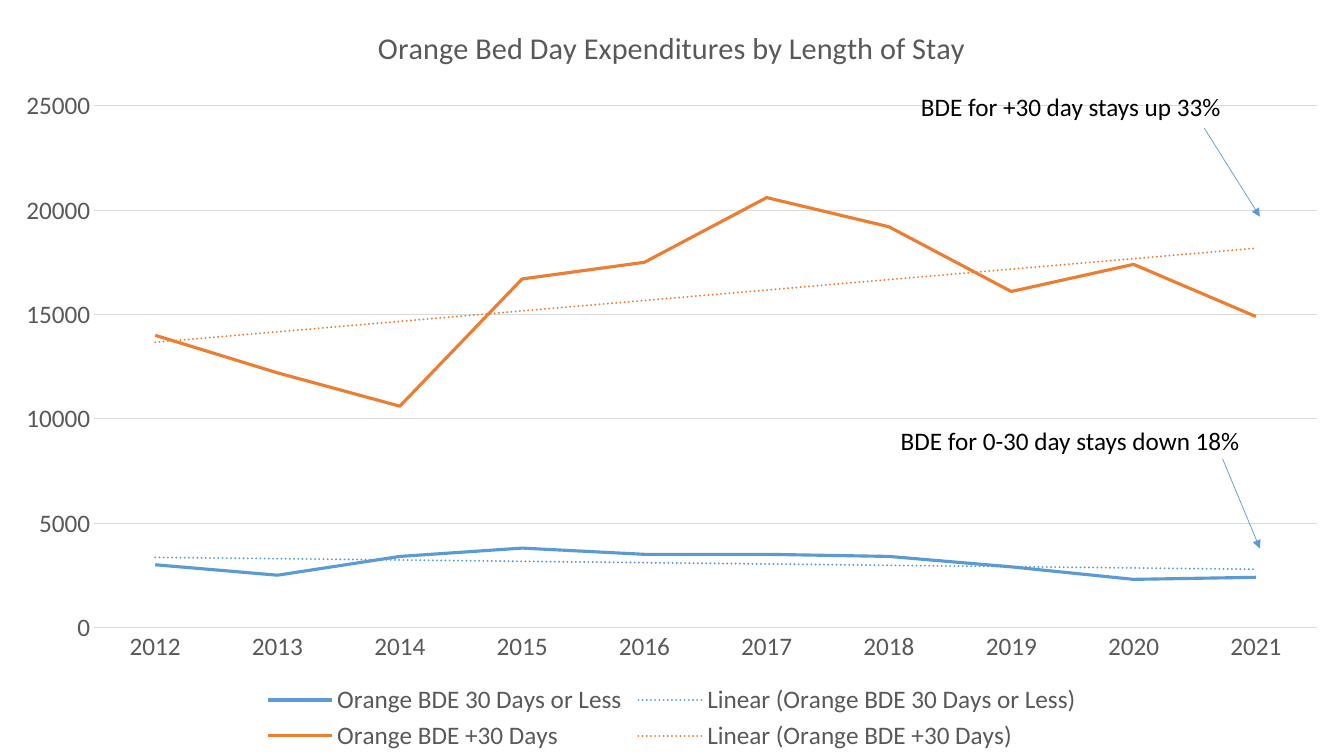
from lxml import etree
from pptx import Presentation
from pptx.chart.data import CategoryChartData
from pptx.dml.color import RGBColor
from pptx.enum.chart import XL_CHART_TYPE, XL_LEGEND_POSITION, XL_MARKER_STYLE, XL_TICK_MARK
from pptx.enum.shapes import MSO_CONNECTOR
from pptx.enum.text import MSO_AUTO_SIZE, PP_ALIGN
from pptx.oxml import parse_xml
from pptx.oxml.ns import nsdecls, qn
from pptx.util import Cm, Pt

LINE_CHART = XL_CHART_TYPE.LINE
LEGEND_BOTTOM = XL_LEGEND_POSITION.BOTTOM
NO_MARKER = XL_MARKER_STYLE.NONE
NO_TICK = XL_TICK_MARK.NONE
STRAIGHT = MSO_CONNECTOR.STRAIGHT
GROW = MSO_AUTO_SIZE.SHAPE_TO_FIT_TEXT
CENTER = PP_ALIGN.CENTER

FONT = "Calibri"
COLORS = {"short": "5B9BD5", "long": "ED7D31", "label": "595959",
          "grid": "D9D9D9", "note": "000000"}
YEARS = [str(year) for year in range(2012, 2022)]
STAYS = [
    ("Orange BDE 30 Days or Less", "short",
     [3000, 2500, 3400, 3800, 3500, 3500, 3400, 2900, 2300, 2400]),
    ("Orange BDE +30 Days", "long",
     [14000, 12200, 10600, 16700, 17500, 20600, 19200, 16100, 17400, 14900]),
]
# text, box (left, top, width, height), arrow start, arrow end, all in cm
NOTES = [
    ("BDE for +30 day stays up 33%", (22.96, 2.18, 8.15, 1.02), (30.35, 3.23), (31.75, 5.46)),
    ("BDE for 0-30 day stays down 18%", (22.45, 10.59, 9.14, 1.02), (30.81, 11.56), (31.75, 13.82)),
]


def rgb(name):
    return RGBColor.from_string(COLORS[name])


def style_font(font, size=18, color="label"):
    font.name = FONT
    font.size = Pt(size)
    font.bold = False
    font.color.rgb = rgb(color)


def style_line(line, color, width):
    line.color.rgb = rgb(color)
    line.width = Pt(width)


def write_text(frame, text, align=CENTER, **font_format):
    paragraph = frame.paragraphs[0]
    paragraph.alignment = align
    run = paragraph.add_run()
    run.text = text
    style_font(run.font, **font_format)


def add_trend(series, color):
    """Add a dotted linear trend line to a series."""
    trend = parse_xml(
        f'<c:trendline {nsdecls("c", "a")}><c:spPr><a:ln w="{Pt(1.5)}" cap="rnd">'
        f'<a:solidFill><a:srgbClr val="{COLORS[color]}"/></a:solidFill>'
        '<a:prstDash val="sysDot"/></a:ln></c:spPr><c:trendlineType val="linear"/>'
        '<c:dispRSqr val="0"/><c:dispEq val="0"/></c:trendline>')
    series._element.find(qn("c:cat")).addprevious(trend)


def place_plot(chart, **fractions):
    """Fix the inner plot area as fractions of the chart."""
    area = chart._chartSpace.chart.plotArea
    for old in area.findall(qn("c:layout")):
        area.remove(old)
    sizes = "".join(f'<c:{key} val="{value}"/>' for key, value in fractions.items())
    area.insert(0, parse_xml(
        f'<c:layout {nsdecls("c")}><c:manualLayout><c:layoutTarget val="inner"/>'
        f'<c:xMode val="edge"/><c:yMode val="edge"/>{sizes}</c:manualLayout></c:layout>'))


def style_axes(chart):
    for axis in (chart.category_axis, chart.value_axis):
        axis.major_tick_mark = axis.minor_tick_mark = NO_TICK
        style_font(axis.tick_labels.font)
    style_line(chart.category_axis.format.line, "grid", 0.75)
    values = chart.value_axis
    values.minimum_scale, values.maximum_scale, values.major_unit = 0, 25000, 5000
    values.format.line.fill.background()
    style_line(values.major_gridlines.format.line, "grid", 0.75)


def add_stay_chart(slide, width, height):
    stays = CategoryChartData(number_format="General")
    stays.categories = YEARS
    for name, _, days in STAYS:
        stays.add_series(name, days)
    chart = slide.shapes.add_chart(LINE_CHART, 0, 0, width, height, stays).chart
    style_font(chart.font)
    chart.has_title = True
    write_text(chart.chart_title.text_frame,
               "Orange Bed Day Expenditures by Length of Stay", size=21.6)
    chart.chart_title.include_in_layout = False
    chart.has_legend = True
    chart.legend.position = LEGEND_BOTTOM
    chart.legend.include_in_layout = False
    style_font(chart.legend.font)
    chart.plots[0].vary_by_categories = False
    for series, (_, color, _) in zip(chart.plots[0].series, STAYS):
        series.smooth = False
        series.marker.style = NO_MARKER
        style_line(series.format.line, color, 2.25)
        add_trend(series, color)
    style_axes(chart)
    place_plot(chart, x=0.07, y=0.14, w=0.91, h=0.69)


def add_arrow(slide, start, end):
    points = [Cm(value) for value in start + end]
    arrow = slide.shapes.add_connector(STRAIGHT, *points)
    style_line(arrow.line, "short", 0.5)
    etree.SubElement(arrow.line._get_or_add_ln(), qn("a:tailEnd"), type="triangle")
    etree.SubElement(arrow._element.spPr, qn("a:effectLst"))


def add_note(slide, text, box, start, end):
    """Add a remark with an arrow to the end of its trend line."""
    frame = slide.shapes.add_textbox(*(Cm(value) for value in box)).text_frame
    frame.word_wrap = False
    frame.auto_size = GROW
    write_text(frame, text, align=PP_ALIGN.LEFT, color="note")
    add_arrow(slide, start, end)


def main():
    deck = Presentation()
    deck.slide_width, deck.slide_height = Cm(33.87), Cm(19.05)
    slide = deck.slides.add_slide(deck.slide_layouts[6])
    add_stay_chart(slide, deck.slide_width, deck.slide_height)
    for note in NOTES:
        add_note(slide, *note)
    deck.save("out.pptx")


if __name__ == "__main__":
    main()
